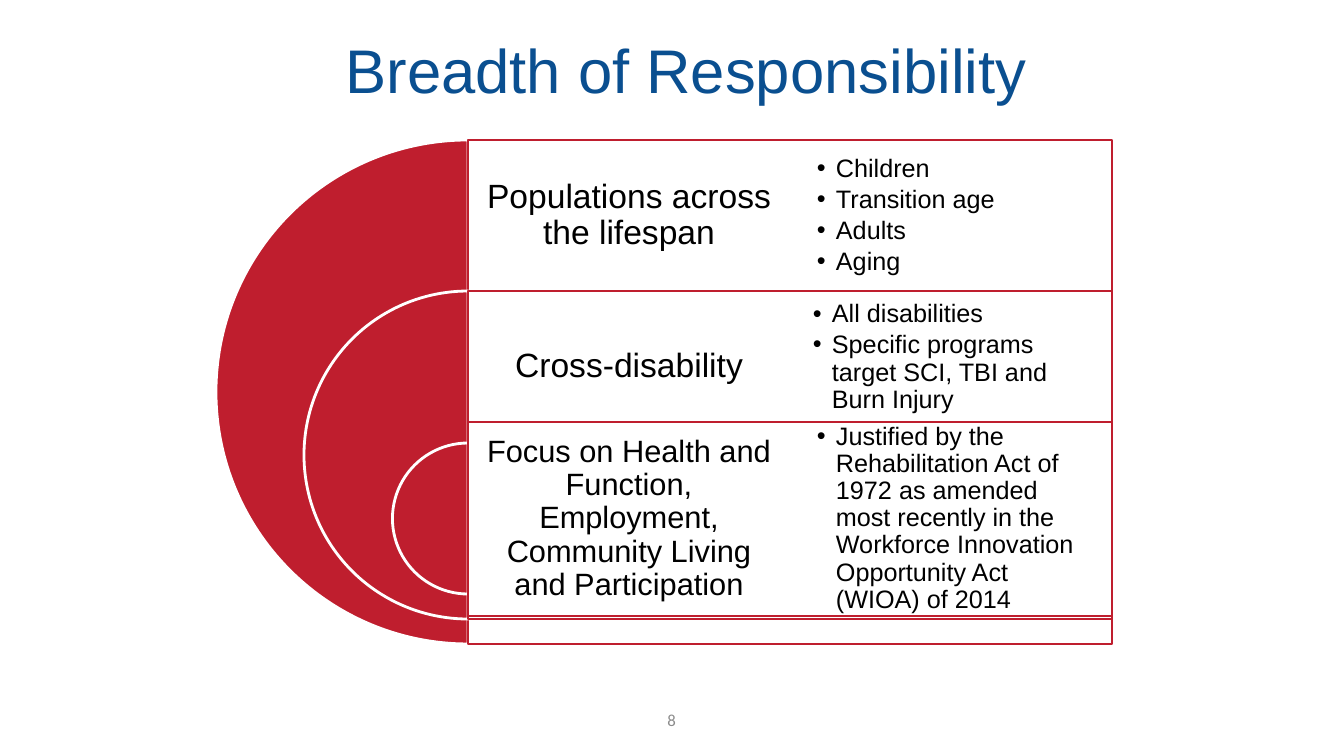
from lxml import etree
from pptx import Presentation
from pptx import util as u
from pptx.dml.color import RGBColor
from pptx.enum import shapes, text
from pptx.oxml.ns import qn

COLORS = {"title": "0A4F90", "red": "BF1E2E", "white": "FFFFFF",
          "text": "000000", "number": "8C8C8C"}
TITLE = "Breadth of Responsibility"
NUMBER = "8"

# Tops and heights in px; each bullet box is given by its left and top.
BANDS = [
    {"label": "Populations across the lifespan", "size": 24, "inset": 10,
     "pie": (140, 504), "panel": (140, 504), "label_h": 151, "bullets_at": (790, 140),
     "bullets": ["Children", "Transition age", "Adults", "Aging"]},
    {"label": "Cross-disability", "size": 24, "inset": 10,
     "pie": (291, 328), "panel": (291, 328), "label_h": 151, "bullets_at": (786, 282),
     "bullets": ["All disabilities", "Specific programs target SCI, TBI and Burn Injury"]},
    {"label": "Focus on Health and Function, Employment, Community Living and Participation",
     "size": 22, "inset": 9,
     "pie": (443, 151), "panel": (422, 194), "label_h": 194, "bullets_at": (790, 443),
     "bullets": ["Justified by the Rehabilitation Act of 1972 as amended most recently "
                 "in the Workforce Innovation Opportunity Act (WIOA) of 2014"]},
]
AXIS_X, PANEL_W = 468, 644
COLUMN_W, BULLETS_H = PANEL_W // 2, 151
BULLET_SIZE, BULLET_INSET, BULLET_INDENT = 18, 27, 19
LINE_SPACING = 0.9


def px(n):
    return u.Emu(round(n * 914400 / 100.8))


def rgb(name):
    return RGBColor.from_string(COLORS[name])


def add_outlined(s, kind, box, fill, line):
    sp = s.shapes.add_shape(kind, *map(px, box))
    sp.shadow.inherit = False
    sp.fill.solid()
    sp.fill.fore_color.rgb = rgb(fill)
    sp.line.color.rgb = rgb(line)
    sp.line.width = u.Pt(2)
    return sp


def add_text(s, box, lines, size, color="text", align=text.PP_ALIGN.CENTER,
             inset=(10, 5), spacing=None, after=0, bullet=False, font="Arial"):
    sp = s.shapes.add_textbox(*map(px, box))
    tf = sp.text_frame
    tf.word_wrap = True
    tf.vertical_anchor = text.MSO_ANCHOR.MIDDLE
    tf.margin_left = tf.margin_right = px(inset[0])
    tf.margin_top = tf.margin_bottom = px(inset[1])
    for i, line in enumerate(lines):
        p = tf.add_paragraph() if i else tf.paragraphs[0]
        p.alignment = align
        p.space_after = u.Pt(after)
        if spacing:
            p.line_spacing = spacing
        if bullet:
            pPr = p._p.get_or_add_pPr()
            pPr.set("marL", str(px(BULLET_INDENT)))
            pPr.set("indent", str(-px(BULLET_INDENT)))
            etree.SubElement(pPr, qn("a:buFont")).set("typeface", "Arial")
            etree.SubElement(pPr, qn("a:buChar")).set("char", "•")
        r = p.add_run()
        r.text = line
        r.font.name = font
        r.font.size = u.Pt(size)
        r.font.color.rgb = rgb(color)


def add_band(s, band):
    """Half disc, panel and label of one band."""
    top, d = band["pie"]
    pie = add_outlined(s, shapes.MSO_SHAPE.PIE, (AXIS_X - d / 2, top, d, d), "red", "white")
    pie.adjustments[0], pie.adjustments[1] = 54, 162  # 90° to 270°

    top, h = band["panel"]
    panel = add_outlined(s, shapes.MSO_SHAPE.RECTANGLE, (AXIS_X, top, PANEL_W, h),
                         "white", "red")
    fill_color = panel._element.spPr.find(qn("a:solidFill"))[0]
    etree.SubElement(fill_color, qn("a:alpha")).set("val", "90000")

    add_text(s, (AXIS_X, top, COLUMN_W, band["label_h"]), [band["label"]], band["size"],
             inset=(band["inset"],) * 2, spacing=LINE_SPACING, after=round(band["size"] * 0.35, 1))


def main():
    prs = Presentation()
    prs.slide_width, prs.slide_height = px(1344), px(756)
    s = prs.slides.add_slide(prs.slide_layouts[6])

    add_text(s, (233, 50, 907, 38), [TITLE], 44, "title")
    for band in BANDS:
        add_band(s, band)
    for band in BANDS:
        add_text(s, (*band["bullets_at"], COLUMN_W, BULLETS_H), band["bullets"], BULLET_SIZE,
                 align=text.PP_ALIGN.LEFT, inset=(BULLET_INSET,) * 2,
                 spacing=LINE_SPACING, after=BULLET_SIZE * 0.15, bullet=True)
    add_text(s, (641, 700, 45, 40), [NUMBER], 12, "number",
             align=text.PP_ALIGN.RIGHT, font="Calibri")
    prs.save("out.pptx")


if __name__ == "__main__":
    main()
